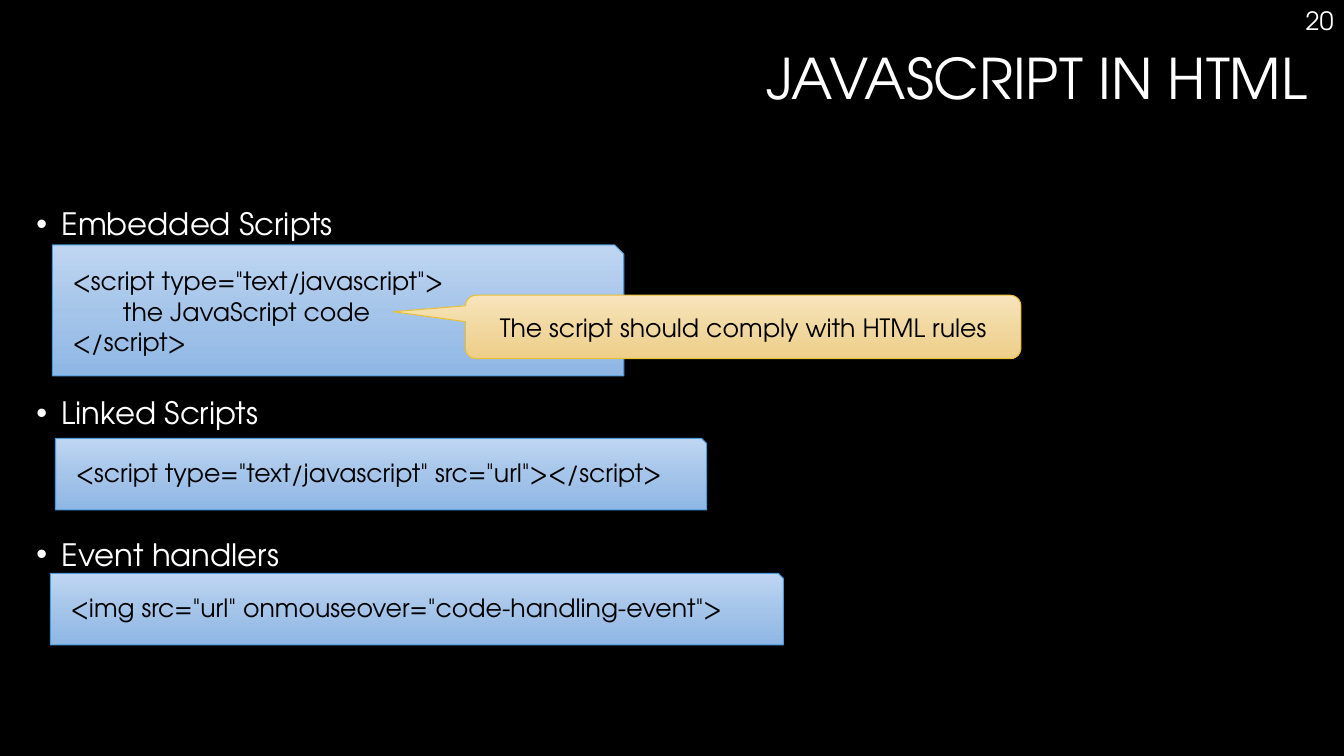
from copy import deepcopy

from pptx import Presentation
from pptx.dml.color import RGBColor
from pptx.enum.shapes import MSO_SHAPE
from pptx.enum.text import MSO_ANCHOR, MSO_AUTO_SIZE, PP_ALIGN
from pptx.oxml.ns import qn
from pptx.util import Cm, Pt

SNIPPED = MSO_SHAPE.SNIP_1_RECTANGLE
CALLOUT = MSO_SHAPE.ROUNDED_RECTANGULAR_CALLOUT
RIGHT, LEFT, CENTER = PP_ALIGN.RIGHT, PP_ALIGN.LEFT, PP_ALIGN.CENTER
TOP, MIDDLE = MSO_ANCHOR.TOP, MSO_ANCHOR.MIDDLE
NO_FIT = MSO_AUTO_SIZE.NONE

FONT = "TeX Gyre Adventor"
WHITE, BLACK = "FFFFFF", "000000"
BLUES, BLUE_EDGE = ("BFD6F2", "A4C4E9", "8FB7E4"), "4A9BDC"
GOLDS, GOLD_EDGE = ("F8E5BD", "F1D8A0", "EECF89"), "E9BF35"


def format_text(frame, size, color, align, anchor):
    frame.word_wrap = True
    frame.auto_size = NO_FIT
    frame.vertical_anchor = anchor
    for para in frame.paragraphs:
        para.alignment = align
        for span in para.runs:
            span.font.name = FONT
            span.font.size = Pt(size)
            span.font.color.rgb = RGBColor.from_string(color)


def paint_box(box, colors, edge):
    """Give the box a three-stop downward gradient and a thin edge."""
    box.shadow.inherit = False
    box.fill.gradient()
    box.fill.gradient_angle = 270
    stop_list = box._element.spPr.find(qn("a:gradFill")).find(qn("a:gsLst"))
    stop_list.insert(1, deepcopy(stop_list[0]))
    for stop, position, color in zip(box.fill.gradient_stops, (0, 0.52, 1), colors):
        stop.position = position
        stop.color.rgb = RGBColor.from_string(color)
    box.line.color.rgb = RGBColor.from_string(edge)
    box.line.width = Pt(0.75)


deck = Presentation()
deck.slide_width, deck.slide_height = Cm(33.87), Cm(19.05)
page = deck.slides.add_slide(deck.slide_layouts[1])
page.background.fill.solid()
page.background.fill.fore_color.rgb = RGBColor.from_string(BLACK)

# Title
title = page.shapes.title
title.left, title.top, title.width, title.height = Cm(0.66), Cm(1.17), Cm(32.54), Cm(3.58)
title.text_frame.text = "JAVASCRIPT IN HTML"
title.text_frame.paragraphs[0].line_spacing = 0.9
format_text(title.text_frame, 40, WHITE, RIGHT, TOP)

# Bulleted headings, spaced to leave room for the code panels
body = page.placeholders[1]
body.left, body.top, body.width, body.height = Cm(0.66), Cm(5.13), Cm(32.54), Cm(12.78)
headings = [("Embedded Scripts", 10), ("Linked Scripts", 111.3), ("Event handlers", 77.5)]
body.text_frame.text = "\n".join(heading for heading, gap in headings)
for para, (heading, gap) in zip(body.text_frame.paragraphs, headings):
    para.line_spacing = 0.9
    para.space_before = Pt(gap)
    properties = para._p.get_or_add_pPr()
    properties.set("marL", str(Cm(0.64)))
    properties.set("indent", str(-Cm(0.64)))
format_text(body.text_frame, 22, WHITE, LEFT, TOP)

# Page number
number = page.shapes.add_textbox(Cm(26.54), 0, Cm(7.32), Cm(1.02))
number.text_frame.text = "20"
format_text(number.text_frame, 18, WHITE, RIGHT, TOP)

# Code panels: left, top, width, height, code
panels = [
    (1.32, 6.17, 14.4, 3.3,
     '<script type="text/javascript">\nthe JavaScript code\n</script>'),
    (1.4, 11.05, 16.41, 1.8, '<script type="text/javascript" src="url"></script>'),
    (1.27, 14.45, 18.47, 1.8, '<img src="url" onmouseover="code-handling-event">'),
]
for left, top, width, height, code in panels:
    panel = page.shapes.add_shape(SNIPPED, Cm(left), Cm(top), Cm(width), Cm(height))
    panel.adjustments[0] = 0.07
    paint_box(panel, BLUES, BLUE_EDGE)
    frame = panel.text_frame
    frame.margin_left = frame.margin_right = frame.margin_bottom = Cm(0.51)
    frame.margin_top = Cm(0.41)
    frame.text = code
    format_text(frame, 18, BLACK, LEFT, TOP)
    for para in frame.paragraphs:
        if not para.text.startswith("<"):
            para._p.get_or_add_pPr().set("marL", str(Cm(1.27)))

# Callout pointing at the embedded code
callout = page.shapes.add_shape(CALLOUT, Cm(11.73), Cm(7.44), Cm(14), Cm(1.6))
for index, value in enumerate((-0.63, -0.24, 0.17)):
    callout.adjustments[index] = value
paint_box(callout, GOLDS, GOLD_EDGE)
callout.text_frame.text = "The script should comply with HTML rules"
format_text(callout.text_frame, 18, BLACK, CENTER, MIDDLE)

deck.save("out.pptx")
